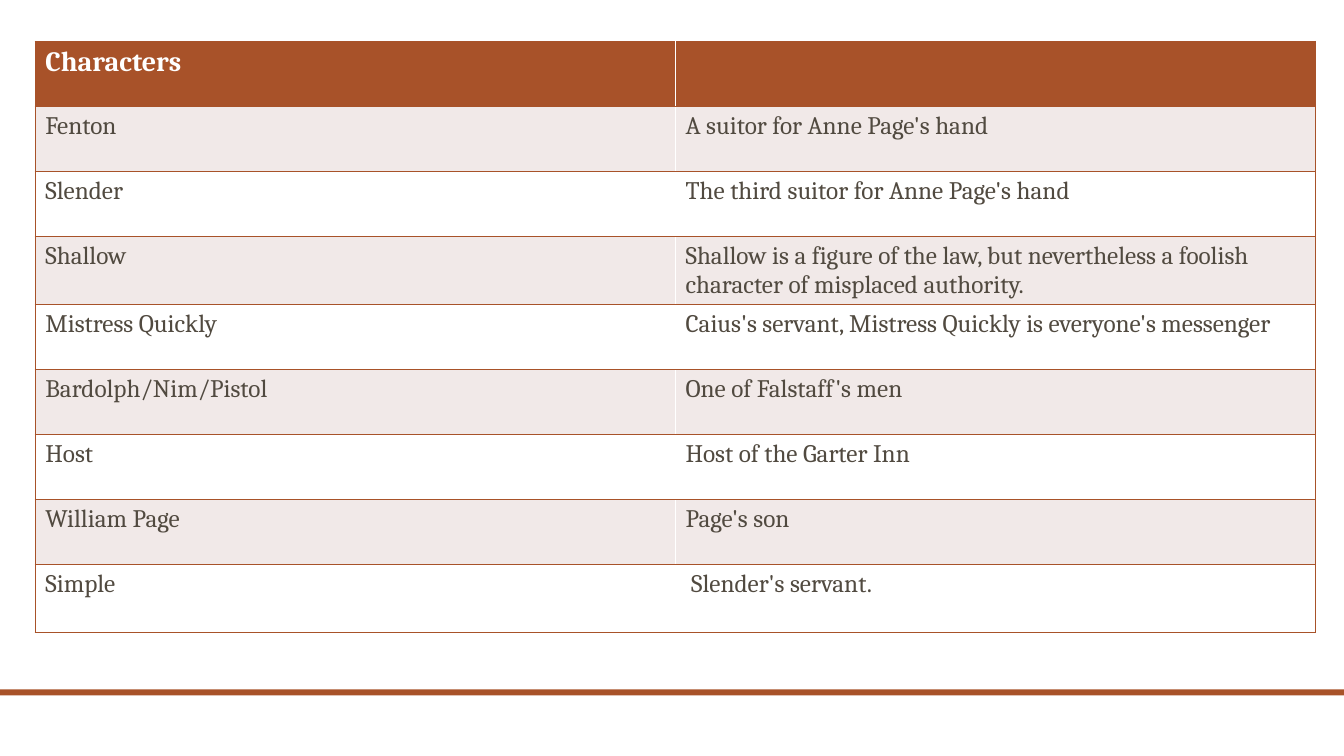
import pptx
import pptx.dml.color
import pptx.enum.shapes
import pptx.oxml
import pptx.oxml.ns
import pptx.util

RGBColor = pptx.dml.color.RGBColor
RUST = RGBColor(0xA8, 0x52, 0x29)
BLUSH = RGBColor(0xF1, 0xE9, 0xE8)
WHITE = RGBColor(0xFF, 0xFF, 0xFF)
INK = RGBColor(0x51, 0x4A, 0x40)

WIDTH = pptx.util.Inches(13.33)
HEIGHT = pptx.util.Inches(7.5)

CAST = [
    ("Characters", ""),
    ("Fenton", "A suitor for Anne Page's hand"),
    ("Slender", "The third suitor for Anne Page's hand"),
    ("Shallow", "Shallow is a figure of the law, but nevertheless "
                "a foolish character of misplaced authority."),
    ("Mistress Quickly",
     "Caius's servant, Mistress Quickly is everyone's messenger"),
    ("Bardolph/Nim/Pistol", "One of Falstaff's men"),
    ("Host", "Host of the Garter Inn"),
    ("William Page", "Page's son"),
    ("Simple", " Slender's servant."),
]


class Page:
    """Draws on one slide; lengths are percentages of its size."""

    def __init__(self, slide, font):
        self.slide = slide
        self.font = font

    def box(self, left, top, width, height):
        return (int(WIDTH * left / 100), int(HEIGHT * top / 100),
                int(WIDTH * width / 100), int(HEIGHT * height / 100))

    def bar(self, area, color):
        kind = pptx.enum.shapes.MSO_SHAPE.RECTANGLE
        shape = self.slide.shapes.add_shape(kind, *self.box(*area))
        shape.shadow.inherit = False
        shape.fill.solid()
        shape.fill.fore_color.rgb = color
        shape.line.fill.background()

    def edge(self, cell, sides, color):
        """Adds one-point borders; sides must run in the order L, R, T, B."""
        props = cell._tc.get_or_add_tcPr()
        for side in sides:
            props.append(pptx.oxml.parse_xml(
                f'<a:ln{side} {pptx.oxml.ns.nsdecls("a")} w="12700">'
                f'<a:solidFill><a:srgbClr val="{color}"/></a:solidFill>'
                f'</a:ln{side}>'))

    def cell(self, cell, text, fill, size, color, bold):
        cell.fill.solid()
        cell.fill.fore_color.rgb = fill
        para = cell.text_frame.paragraphs[0]
        para.font.size = pptx.util.Pt(size)
        if text:
            run = para.add_run()
            run.text = text
            run.font.name = self.font
            run.font.size = pptx.util.Pt(size)
            run.font.bold = bold
            run.font.color.rgb = color

    def table(self, area, data):
        frame = self.slide.shapes.add_table(
            len(data), len(data[0]), *self.box(*area))
        table = frame.table
        for row, texts in enumerate(data):
            if row == 0:
                style = (RUST, 20, WHITE, True)
            else:
                style = (BLUSH if row % 2 else WHITE, 18, INK, False)
            for col, text in enumerate(texts):
                cell = table.cell(row, col)
                self.edge(cell, "RTB" if col else "LTB", RUST)
                self.cell(cell, text, *style)
        return table


def main():
    deck = pptx.Presentation()
    deck.slide_width = WIDTH
    deck.slide_height = HEIGHT
    page = Page(deck.slides.add_slide(deck.slide_layouts[6]), "Cambria")
    page.bar((0, 91.2, 100, 0.8), RUST)
    table = page.table((2.63, 5.5, 95.27, 77.3), CAST)
    table.rows[len(CAST) - 1].height = int(HEIGHT * 0.09)
    deck.save("out.pptx")


if __name__ == "__main__":
    main()
